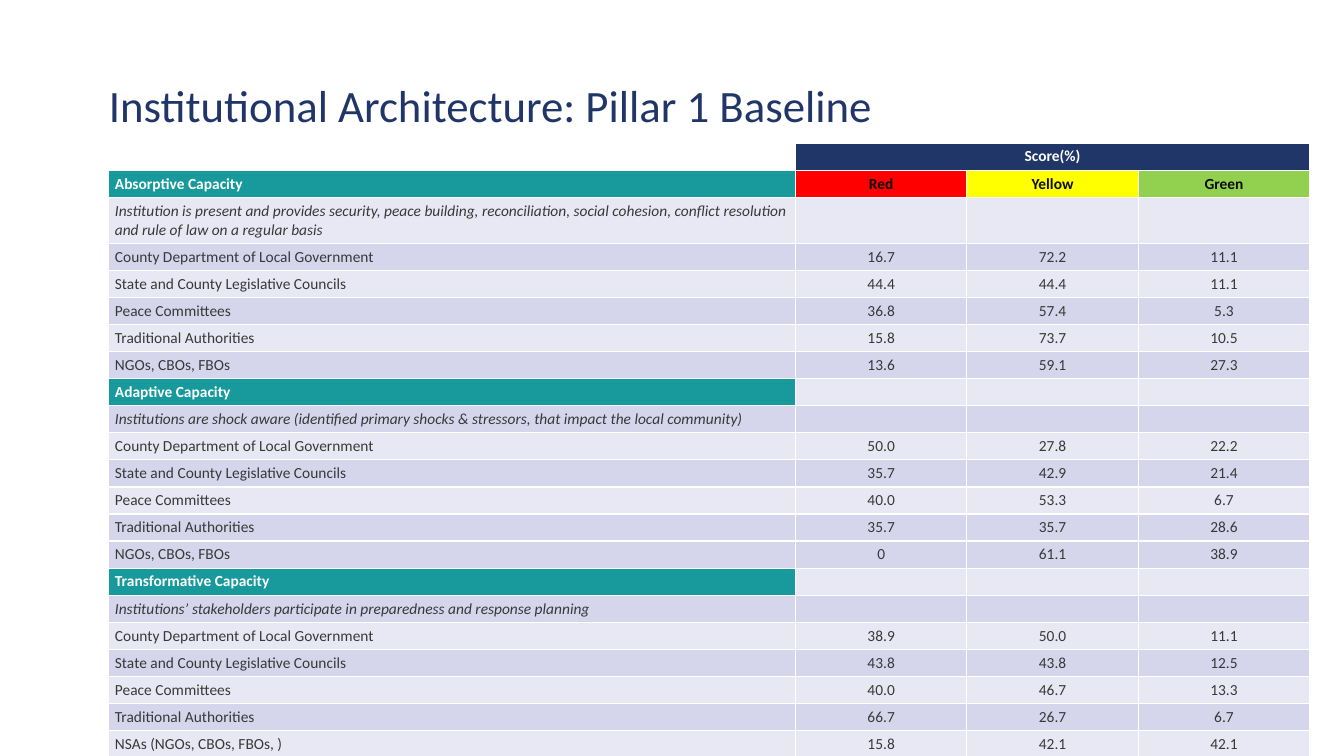
from lxml.etree import SubElement
from pptx import Presentation
from pptx.dml.color import RGBColor
from pptx.enum.text import MSO_ANCHOR as Anchor, PP_ALIGN as Align
from pptx.oxml.ns import qn
from pptx.util import Inches, Pt

# Content
TITLE = "Institutional Architecture: Pillar 1 Baseline"
SCORE = "Score(%)"
LEVELS = [("Red", "FF0000"), ("Yellow", "FFFF00"), ("Green", "92D050")]
COUNTY = "County Department of Local Government"
STATE = "State and County Legislative Councils"
PEACE = "Peace Committees"
ELDERS = "Traditional Authorities"
GROUPS = "NGOs, CBOs, FBOs"

# Heading, note, band of each row below the heading, scores
PARTS = [
    ("Absorptive Capacity",
     "Institution is present and provides security, peace building, reconciliation, "
     "social cohesion, conflict resolution and rule of law on a regular basis",
     "LDLDLD",
     [(COUNTY, "16.7", "72.2", "11.1"),
      (STATE, "44.4", "44.4", "11.1"),
      (PEACE, "36.8", "57.4", "5.3"),
      (ELDERS, "15.8", "73.7", "10.5"),
      (GROUPS, "13.6", "59.1", "27.3")]),
    ("Adaptive Capacity",
     "Institutions are shock aware (identified primary shocks & stressors, "
     "that impact the local community)",
     "DLDLDD",
     [(COUNTY, "50.0", "27.8", "22.2"),
      (STATE, "35.7", "42.9", "21.4"),
      (PEACE, "40.0", "53.3", "6.7"),
      (ELDERS, "35.7", "35.7", "28.6"),
      (GROUPS, "0", "61.1", "38.9")]),
    ("Transformative Capacity",
     "Institutions’ stakeholders participate in preparedness and response planning",
     "DLDLDL",
     [(COUNTY, "38.9", "50.0", "11.1"),
      (STATE, "43.8", "43.8", "12.5"),
      (PEACE, "40.0", "46.7", "13.3"),
      (ELDERS, "66.7", "26.7", "6.7"),
      ("NSAs (NGOs, CBOs, FBOs, )", "15.8", "42.1", "42.1")]),
]

# Look
FONT = "Calibri"
NAVY, TEAL, WHITE, INK, BLACK = "203568", "189A9D", "FFFFFF", "393839", "0D0D0D"
BANDS = {"L": "E8E8F5", "D": "D5D6EC"}
WIDTHS = [6.81, 1.7, 1.7, 1.7]
ROW, TALL = 0.23, 0.4


def color(code):
    return RGBColor.from_string(code)


def write(para, text, size, ink, bold=False, italic=False):
    run = para.add_run()
    run.text = text
    font = run.font
    font.name, font.size, font.bold, font.italic = FONT, Pt(size), bold, italic
    font.color.rgb = color(ink)


def edge(cell):
    props = cell._tc.get_or_add_tcPr()
    for i, side in enumerate(("lnL", "lnR", "lnT", "lnB")):
        line = props.makeelement(qn(f"a:{side}"), {"w": str(Pt(1))})
        fill = SubElement(line, qn("a:solidFill"))
        SubElement(fill, qn("a:srgbClr"), val=WHITE)
        props.insert(i, line)


def paint(cell, fill, text="", ink=INK, center=False, bold=False, italic=False):
    cell.fill.solid()
    cell.fill.fore_color.rgb = color(fill)
    cell.margin_left = cell.margin_right = Inches(0.06)
    cell.margin_top = cell.margin_bottom = Inches(0.04)
    cell.vertical_anchor = Anchor.MIDDLE
    edge(cell)
    para = cell.text_frame.paragraphs[0]
    if center:
        para.alignment = Align.CENTER
    if text:
        write(para, text, 11, ink, bold, italic)
    else:
        # Keeps an empty cell as low as a line of text
        SubElement(para._p, qn("a:endParaRPr"), sz="1100")


deck = Presentation()
deck.slide_width, deck.slide_height = Inches(13.33), Inches(7.5)
slide = deck.slides.add_slide(deck.slide_layouts[5])

# Title
title = slide.shapes.title
title.left, title.top = Inches(1.08), Inches(0.5)
title.width, title.height = Inches(11.58), Inches(1.08)
frame = title.text_frame
frame.margin_left = frame.margin_right = frame.margin_top = frame.margin_bottom = 0
frame.vertical_anchor = Anchor.MIDDLE
frame.paragraphs[0].alignment = Align.LEFT
write(frame.paragraphs[0], TITLE, 32, NAVY)

# Table grid
count = 1 + sum(2 + len(scores) for _, _, _, scores in PARTS)
table = slide.shapes.add_table(
    count, len(WIDTHS), Inches(1.08), Inches(1.42),
    Inches(sum(WIDTHS)), Inches(ROW * (count - 1) + TALL)).table
table.first_row = table.horz_banding = False
for col, width in zip(table.columns, WIDTHS):
    col.width = Inches(width)
for row in table.rows:
    row.height = Inches(ROW)
table.rows[2].height = Inches(TALL)

# Score heading
table.cell(0, 1).merge(table.cell(0, 3))
paint(table.cell(0, 0), WHITE)
for c in range(1, 4):
    paint(table.cell(0, c), NAVY, SCORE if c == 1 else "", WHITE, True, True)

# Capacity parts
r = 1
for part, (head, note, bands, scores) in enumerate(PARTS):
    paint(table.cell(r, 0), TEAL, head, WHITE, bold=True)
    for c, (level, shade) in enumerate(LEVELS, 1):
        if part == 0:
            paint(table.cell(r, c), shade, level, BLACK, True, True)
        else:
            paint(table.cell(r, c), BANDS["L"])
    r += 1
    for band, texts in zip(bands, [(note, "", "", "")] + scores):
        for c, text in enumerate(texts):
            paint(table.cell(r, c), BANDS[band], text,
                  center=c > 0, italic=text == note)
        r += 1

deck.save("out.pptx")
